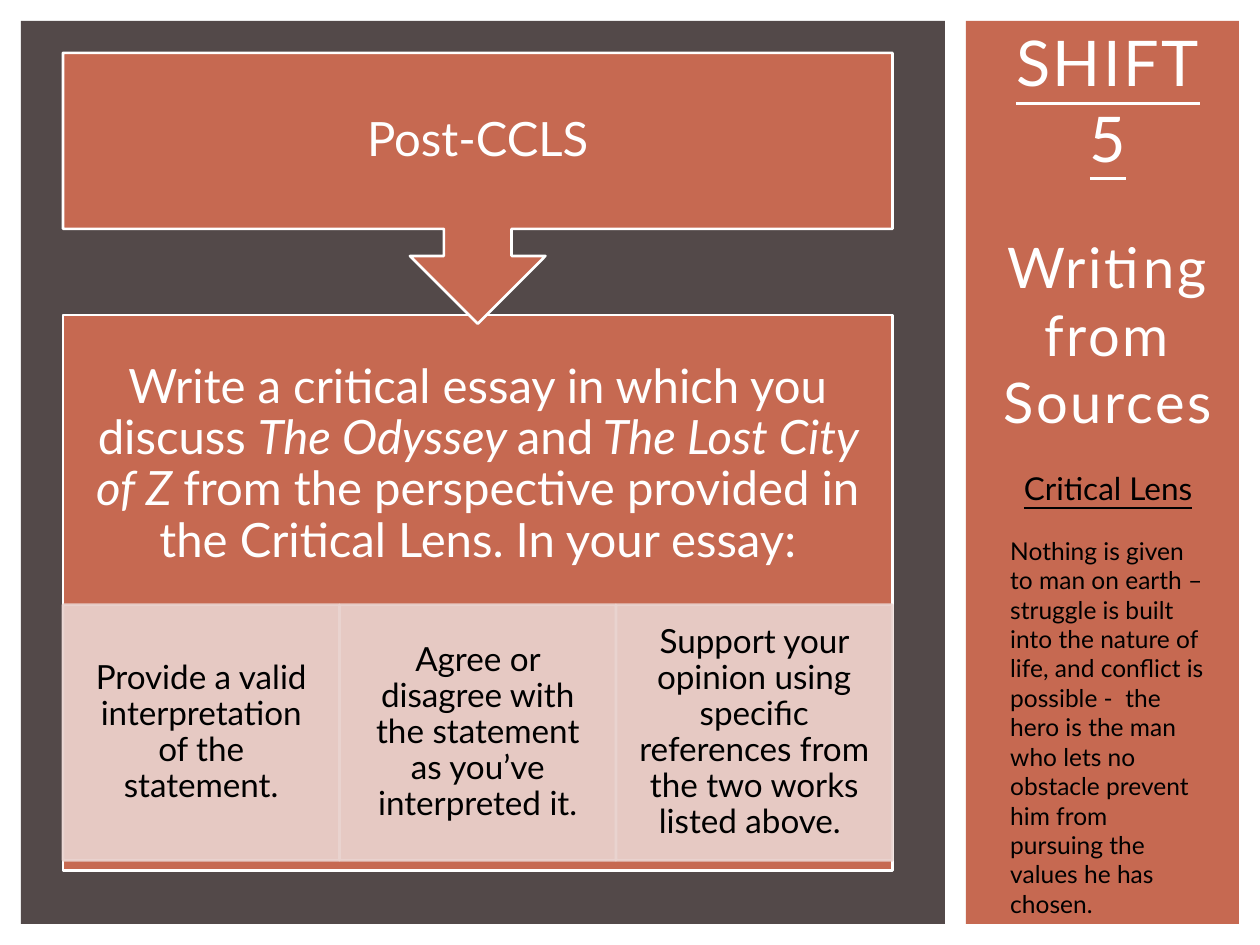
from pptx import Presentation
from pptx.dml.color import RGBColor
from pptx.enum import shapes, text
from pptx.oxml.ns import qn
from pptx.util import Pt
from lxml import etree

WHITE = RGBColor(0xFF, 0xFF, 0xFF)
BLACK = RGBColor(0, 0, 0)
RUST = RGBColor(0xC6, 0x69, 0x51)
BROWN = RGBColor(0x53, 0x49, 0x49)
PINK = RGBColor(0xEA, 0xD4, 0xD0)
FONT = "Lato"
CENTER, LEFT = text.PP_ALIGN.CENTER, text.PP_ALIGN.LEFT
TOP, MIDDLE = text.MSO_ANCHOR.TOP, text.MSO_ANCHOR.MIDDLE
RECT = shapes.MSO_SHAPE.RECTANGLE
CALLOUT = shapes.MSO_SHAPE.DOWN_ARROW_CALLOUT

# Content: a paragraph is a list of (wording, italic) runs
HEADING = [("Post-CCLS", False)]
TASK = [
    ("Write a critical essay in which you discuss ", False),
    ("The Odyssey ", True),
    ("and", False),
    (" The Lost City of Z ", True),
    ("from the perspective provided in the Critical Lens. In your essay:", False),
]
STEPS = [
    "Provide a valid interpretation of the statement.",
    "Agree or disagree with the statement as you’ve interpreted it.",
    "Support your opinion using specific references from the two works listed above. ",
]
SHIFT, TOPIC = "SHIFT 5", "Writing from Sources"
LENS_TITLE = "Critical Lens"
LENS = ("Nothing is given to man on earth – struggle is built into the nature of life, "
        "and conflict is possible -  the hero is the man who lets no obstacle prevent "
        "him from pursuing the values he has chosen.")

# Layout in points
MARGIN, BAND_H = 12, 516
MAIN_W, SIDE_X, SIDE_W = 528, 552, 156
DIAGRAM_X, DIAGRAM_W = 36, 474
HEAD_Y, HEAD_H, HEAD_BOX = 30.2, 154.8, 0.65
PANEL_Y, PANEL_H, TASK_H = 180, 317.5, 171.5
STEP_Y, STEP_H = 345.6, 146
STEP_W = DIAGRAM_W / len(STEPS)
PAD = 15


def add_block(kind, x, y, w, h, fill, line=None):
    sp = s.shapes.add_shape(kind, Pt(x), Pt(y), Pt(w), Pt(h))
    sp.shadow.inherit = False
    sp.fill.solid()
    sp.fill.fore_color.rgb = fill
    if line is None:
        sp.line.fill.background()
    else:
        sp.line.color.rgb = line
        sp.line.width = Pt(1.5)
    return sp


def set_opacity(sp, percent):
    for color in sp._element.spPr.iter(qn("a:srgbClr")):
        etree.SubElement(color, qn("a:alpha")).set("val", str(percent * 1000))


def setup_frame(sp, insets, anchor):
    tf = sp.text_frame
    tf.word_wrap = True
    tf.vertical_anchor = anchor
    tf.margin_left, tf.margin_top, tf.margin_right, tf.margin_bottom = map(Pt, insets)
    return tf


def write(p, runs, size, color, align=CENTER, underline=False, spacing=None,
          line_spacing=None, before=0):
    p.alignment = align
    p.space_before = Pt(before)
    p.line_spacing = line_spacing
    p.font.name, p.font.size = FONT, Pt(size)
    p.font.color.rgb = color
    p.font.underline = underline
    for wording, italic in runs:
        r = p.add_run()
        r.text = wording
        if italic:
            r.font.italic = True
        if spacing:
            r._r.get_or_add_rPr().set("spc", str(int(spacing * 100)))


def fill_block(sp, runs, size, color, insets):
    tf = setup_frame(sp, insets, MIDDLE)
    write(tf.paragraphs[0], runs, size, color, line_spacing=0.9)


def add_text(x, y, w, h, insets):
    box = s.shapes.add_textbox(Pt(x), Pt(y), Pt(w), Pt(h))
    return setup_frame(box, insets, TOP)


prs = Presentation()
prs.slide_width, prs.slide_height = Pt(720), Pt(540)
s = prs.slides.add_slide(prs.slide_layouts[6])

# Background bands
add_block(RECT, SIDE_X, MARGIN, SIDE_W, BAND_H, RUST)
add_block(RECT, MARGIN, MARGIN, MAIN_W, BAND_H, BROWN)

# Task panel, its text held above the steps
panel = add_block(RECT, DIAGRAM_X, PANEL_Y, DIAGRAM_W, PANEL_H, RUST, WHITE)
fill_block(panel, TASK, 27, WHITE, (PAD, PAD, PAD, PANEL_H - TASK_H + PAD))

# Steps
for i, step in enumerate(STEPS):
    sp = add_block(RECT, DIAGRAM_X + i * STEP_W, STEP_Y, STEP_W, STEP_H, PINK, PINK)
    set_opacity(sp, 90)
    fill_block(sp, [(step, False)], 19, BLACK, (10.8, 2, 10.8, 2))

# Heading with arrow
head = add_block(CALLOUT, DIAGRAM_X, HEAD_Y, DIAGRAM_W, HEAD_H, RUST, WHITE)
for i, value in enumerate((0.25, 0.25, 0.25, HEAD_BOX)):
    head.adjustments[i] = value
fill_block(head, HEADING, 27, WHITE, (PAD,) * 4)

# Sidebar title
tf = add_text(559.4, 0.7, 147.6, 282, (7.2, 13, 7.2, 3.6))
write(tf.paragraphs[0], [(SHIFT, False)], 36, WHITE, underline=True, spacing=1.5)
write(tf.add_paragraph(), [(TOPIC, False)], 32, WHITE, spacing=1.5, before=33)

# Sidebar quotation
tf = add_text(570.2, 264.2, 126, 250, (7.2, 3.6, 7.2, 3.6))
write(tf.paragraphs[0], [(LENS_TITLE, False)], 18, BLACK, underline=True)
write(tf.add_paragraph(), [(LENS, False)], 14, BLACK, LEFT, before=16.8)

prs.save("out.pptx")
